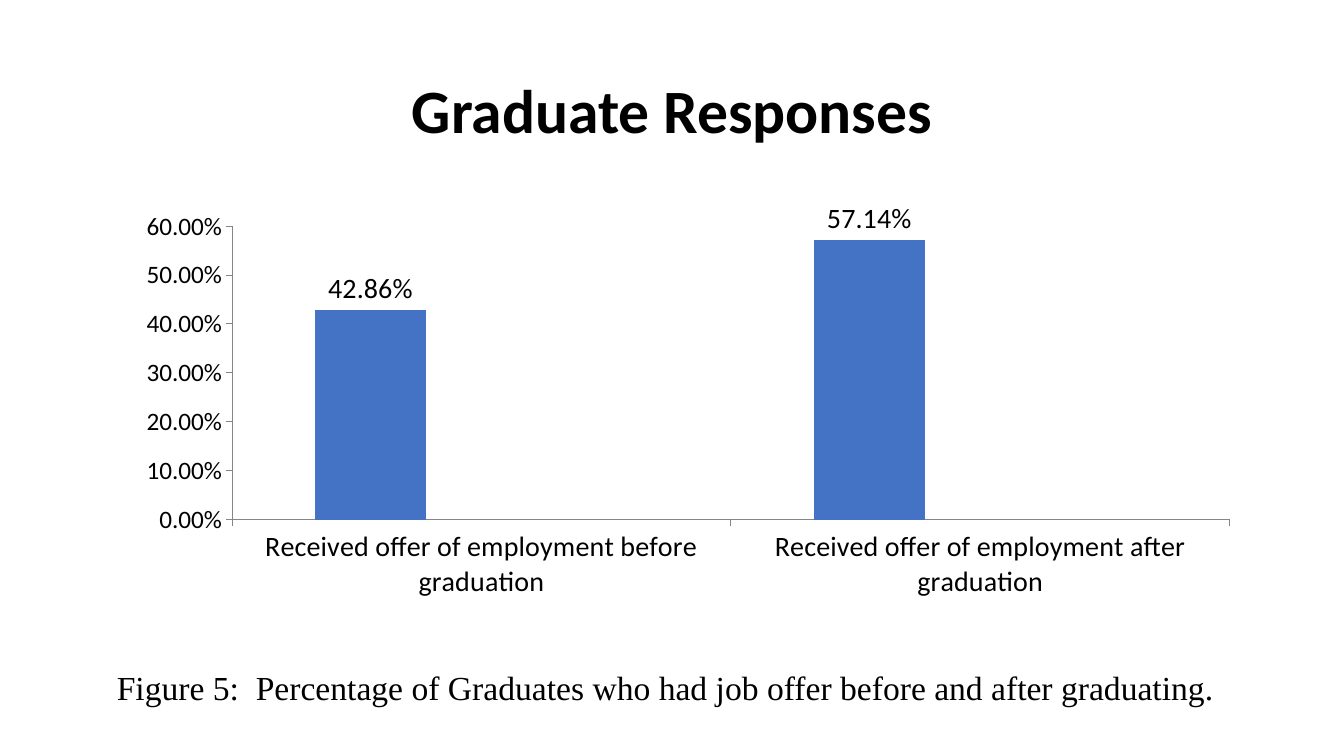
from dataclasses import dataclass
from typing import Any

from pptx import Presentation
from pptx.chart.data import CategoryChartData
from pptx.dml.color import RGBColor
from pptx.enum.chart import XL_CHART_TYPE, XL_LABEL_POSITION, XL_TICK_MARK
from pptx.enum.text import MSO_ANCHOR, MSO_AUTO_SIZE, PP_ALIGN
from pptx.util import Emu, Pt

PX = 9144  # 100 px to the inch


@dataclass(frozen=True)
class Theme:
    sans: str = "Calibri"
    serif: str = "Times New Roman"
    ink: str = "000000"
    axis: str = "868686"
    bars: tuple[str, ...] = ("4472C4", "ED7D31", "A5A5A5")
    title: int = 44
    note: int = 24
    label: int = 20
    scale: int = 18
    base: int = 10


@dataclass(frozen=True)
class Box:
    x: int
    y: int
    w: int
    h: int

    def emu(self) -> tuple[Emu, ...]:
        return tuple(Emu(v * PX) for v in (self.x, self.y, self.w, self.h))


@dataclass(frozen=True)
class Label:
    text: str
    box: Box
    font: dict[str, Any]
    para: dict[str, Any]
    frame: dict[str, Any]


@dataclass(frozen=True)
class Series:
    name: str
    vals: tuple[float | None, ...]
    color: str


THEME = Theme()
RATE = "0.00%"

# Wording and values
LABELS = (
    Label(
        "Graduate Responses",
        Box(92, 40, 1150, 145),
        {"name": THEME.sans, "size": Pt(THEME.title), "bold": True},
        {"alignment": PP_ALIGN.CENTER, "line_spacing": 0.9},
        {"word_wrap": True},
    ),
    Label(
        "Figure 5:  Percentage of Graduates who had job offer before and after graduating.",
        Box(106, 657, 1118, 50),
        {"name": THEME.serif, "size": Pt(THEME.note)},
        {"alignment": PP_ALIGN.LEFT},
        {"word_wrap": False, "auto_size": MSO_AUTO_SIZE.SHAPE_TO_FIT_TEXT},
    ),
)
GROUPS = tuple(
    f"Received offer of employment {time} graduation" for time in ("before", "after")
)
VALUES = ((0.4286, 0.5714), (None, None), (None, None))
SERIES = tuple(
    Series(f"Series {num}", vals, color)
    for num, (vals, color) in enumerate(zip(VALUES, THEME.bars), 1)
)
PLOT = Box(123, 200, 1119, 402)


def apply(item: Any, values: dict[str, Any]) -> None:
    for key, value in values.items():
        setattr(item, key, value)


def style(font: Any, values: dict[str, Any]) -> None:
    apply(font, values)
    font.color.rgb = RGBColor.from_string(THEME.ink)


def add_label(slide: Any, label: Label) -> None:
    frame = slide.shapes.add_textbox(*label.box.emu()).text_frame
    apply(frame, {"vertical_anchor": MSO_ANCHOR.MIDDLE, **label.frame})
    para = frame.paragraphs[0]
    apply(para, label.para)
    run = para.add_run()
    run.text = label.text
    style(run.font, label.font)


def set_axis(axis: Any, size: int, values: dict[str, Any]) -> None:
    apply(axis, {
        "has_major_gridlines": False,
        "major_tick_mark": XL_TICK_MARK.OUTSIDE,
        "minor_tick_mark": XL_TICK_MARK.NONE,
        **values,
    })
    style(axis.tick_labels.font, {"name": THEME.sans, "size": Pt(size)})
    axis.format.line.width = Pt(0.75)
    axis.format.line.color.rgb = RGBColor.from_string(THEME.axis)


def add_bars(slide: Any) -> None:
    data = CategoryChartData(number_format=RATE)
    data.categories = GROUPS
    for row in SERIES:
        data.add_series(row.name, row.vals)
    chart = slide.shapes.add_chart(
        XL_CHART_TYPE.COLUMN_CLUSTERED, *PLOT.emu(), data
    ).chart
    apply(chart, {"has_legend": False, "has_title": False})
    style(chart.font, {"name": THEME.sans, "size": Pt(THEME.base)})

    # Axes
    set_axis(chart.category_axis, THEME.label, {})
    set_axis(chart.value_axis, THEME.scale, {
        "minimum_scale": 0, "maximum_scale": 0.6, "major_unit": 0.1,
    })
    form = {"number_format": RATE, "number_format_is_linked": False}
    apply(chart.value_axis.tick_labels, form)

    # Columns and their values
    plot = chart.plots[0]
    apply(plot, {"gap_width": 150, "overlap": 0, "vary_by_categories": False})
    for bar, row in zip(plot.series, SERIES):
        bar.invert_if_negative = False
        bar.format.fill.solid()
        bar.format.fill.fore_color.rgb = RGBColor.from_string(row.color)
    tags = plot.series[0].data_labels
    apply(tags, {
        "show_value": True, "position": XL_LABEL_POSITION.OUTSIDE_END, **form,
    })
    style(tags.font, {"name": THEME.sans, "size": Pt(THEME.label)})


def main() -> None:
    deck = Presentation()
    apply(deck, {"slide_width": Emu(1333 * PX), "slide_height": Emu(750 * PX)})
    slide = deck.slides.add_slide(deck.slide_layouts[6])
    title, note = LABELS
    add_label(slide, title)
    add_bars(slide)
    add_label(slide, note)
    deck.save("out.pptx")


if __name__ == "__main__":
    main()
